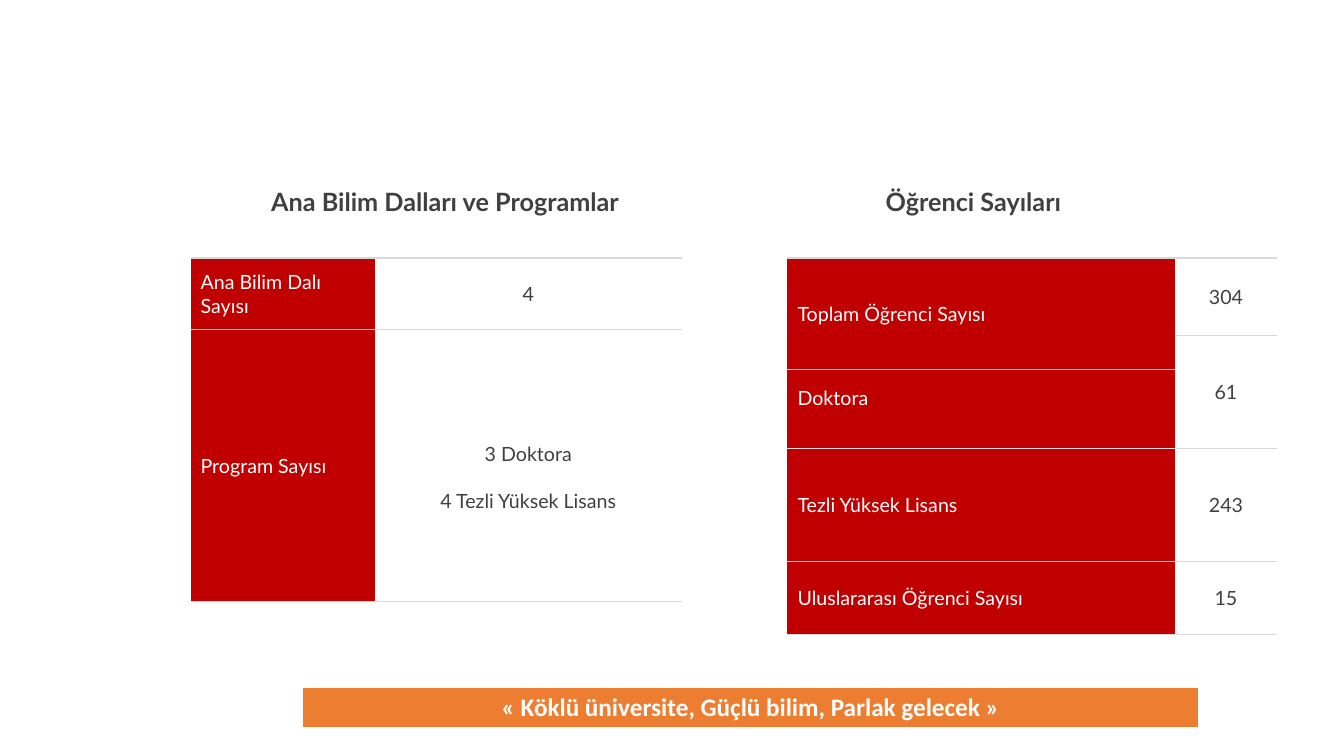
from lxml import etree
from pptx import Presentation
from pptx.dml.color import RGBColor
from pptx.enum.text import MSO_ANCHOR as Anchor, PP_ALIGN as Align
from pptx.oxml.ns import qn
from pptx.util import Inches, Pt

RED = RGBColor(0xC0, 0x00, 0x00)
ORANGE = RGBColor(0xED, 0x7D, 0x31)
WHITE = RGBColor(0xFF, 0xFF, 0xFF)
GRAY = RGBColor(0xD9, 0xD9, 0xD9)
DARK = RGBColor(0x40, 0x40, 0x40)
HEAD = RGBColor(0x40, 0x40, 0x41)


def style(frame, size, color, align, name="Lato", bold=False):
    for para in frame.paragraphs:
        para.alignment = align
        for font in [para.font] + [run.font for run in para.runs]:
            font.size = Pt(size)
            font.name = name
            font.bold = bold
            font.color.rgb = color


def heading(shape, left, text):
    shape.left, shape.top = Inches(left), Inches(1.68)
    shape.width, shape.height = Inches(5.23), Inches(0.64)
    frame = shape.text_frame
    frame.word_wrap = True
    frame.vertical_anchor = Anchor.MIDDLE
    frame.text = text
    style(frame, 18, HEAD, Align.CENTER, bold=True)


def border(cell, lines):
    """Draw the given sides as {side: (color, points)} and clear the others."""
    props = cell._tc.get_or_add_tcPr()
    for place, side in enumerate("LRTB"):
        line = etree.Element(qn(f"a:ln{side}"))
        if side in lines:
            color, width = lines[side]
            line.set("w", str(Pt(width)))
            fill = etree.SubElement(line, qn("a:solidFill"))
            etree.SubElement(fill, qn("a:srgbClr")).set("val", str(color))
        else:
            etree.SubElement(line, qn("a:noFill"))
        props.insert(place, line)


def grid(slide, left, top, cols, rows):
    shape = slide.shapes.add_table(
        len(rows), len(cols), Inches(left), Inches(top),
        Inches(sum(cols)), Inches(sum(rows)))
    table = shape.table
    table.first_row = table.horz_banding = False
    for col, width in zip(table.columns, cols):
        col.width = Inches(width)
    for row, height in zip(table.rows, rows):
        row.height = Inches(height)
    return table


def facts(slide, left, cols, rows, cells, merges=()):
    """Add a table with red labels on the left and plain values on the right."""
    table = grid(slide, left, 2.56, cols, rows)
    for first, last in merges:
        table.cell(*first).merge(table.cell(*last))
    for r, texts in enumerate(cells):
        for c, text in enumerate(texts):
            cell = table.cell(r, c)
            cell.vertical_anchor = Anchor.MIDDLE
            if text:
                cell.text_frame.text = text
            if c == 0:
                cell.fill.solid()
                cell.fill.fore_color.rgb = RED
                style(cell.text_frame, 14, WHITE, Align.LEFT)
            else:
                cell.fill.background()
                style(cell.text_frame, 14, DARK, Align.CENTER)
            sides = "B" if cell.is_spanned else "T" if cell.is_merge_origin else "TB"
            border(cell, {side: (GRAY, 1) for side in sides})
    return table


def banner(slide, text):
    cell = grid(slide, 3, 6.82, [8.89], [0.41]).cell(0, 0)
    cell.text_frame.text = text
    cell.fill.solid()
    cell.fill.fore_color.rgb = ORANGE
    style(cell.text_frame, 18, WHITE, Align.CENTER, "Calibri", True)
    border(cell, {"L": (WHITE, 1), "R": (WHITE, 1), "T": (WHITE, 1), "B": (WHITE, 3)})


def main():
    deck = Presentation()
    deck.slide_width, deck.slide_height = Inches(13.33), Inches(7.5)
    slide = deck.slides.add_slide(deck.slide_layouts[5])
    heading(slide.shapes.title, 1.8, "Ana Bilim Dalları ve Programlar")
    box = slide.shapes.add_textbox(0, 0, Inches(1), Inches(1))
    heading(box, 7.04, "Öğrenci Sayıları")

    units = facts(slide, 1.89, [1.83, 3.04], [0.71, 2.7], [
        ("Ana Bilim Dalı Sayısı", "4"),
        ("Program Sayısı", "3 Doktora\n4 Tezli Yüksek Lisans"),
    ])
    for para in units.cell(1, 1).text_frame.paragraphs:
        para.line_spacing = 2.0

    counts = facts(slide, 7.81, [3.84, 1.02], [0.77, 0.33, 0.79, 1.12, 0.72], [
        ("Toplam Öğrenci Sayısı", "304"),
        (None, "61"),
        ("Doktora", None),
        ("Tezli Yüksek Lisans", "243"),
        ("Uluslararası Öğrenci Sayısı", "15"),
    ], merges=[((0, 0), (1, 0)), ((1, 1), (2, 1))])
    counts.cell(2, 0).margin_bottom = Inches(0.27)

    banner(slide, "« Köklü üniversite, Güçlü bilim, Parlak gelecek »")
    deck.save("out.pptx")


if __name__ == "__main__":
    main()
